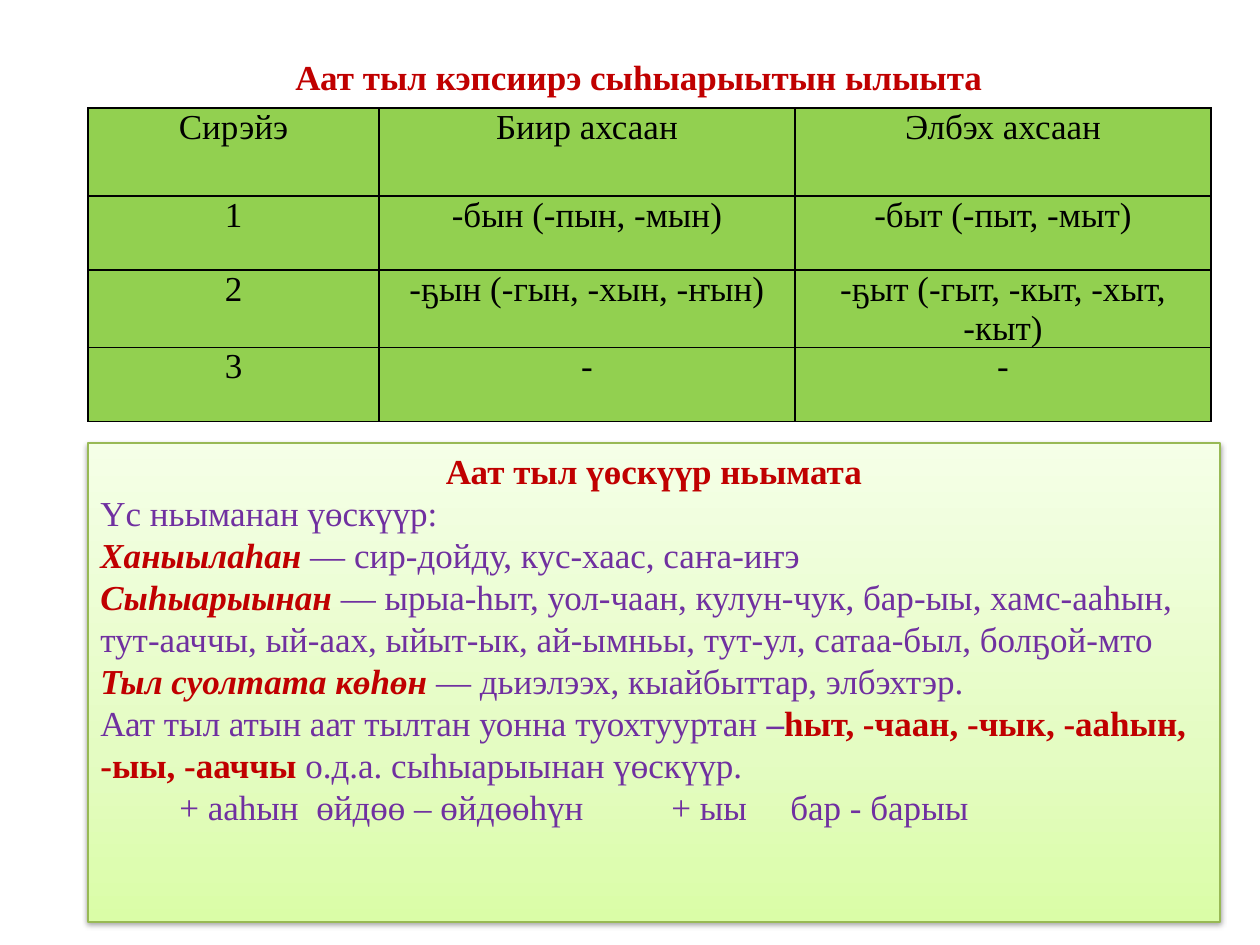
from lxml.etree import SubElement
from copy import deepcopy
from pptx import Presentation
from pptx.dml.color import RGBColor
from pptx.enum.shapes import MSO_SHAPE
from pptx.enum.text import MSO_ANCHOR, PP_ALIGN
from pptx.oxml.ns import qn
from pptx.util import Emu, Pt

COLORS = {
    "text": "000000", "heading": "C00000", "body": "7030A0",
    "cell": "92D050", "edge": "98B955",
}
PANEL_GRADIENT = [(0, "DAFDA7"), (0.35, "E4FCC2"), (1, "F5FFE7")]

HEADING = {"color": "heading", "bold": True}
TERM = {"color": "heading", "bold": True, "italic": True}
BODY = {"color": "body"}

ENDINGS = [
    ["Сирэйэ", "Биир ахсаан", "Элбэх ахсаан"],
    ["1", "-бын (-пын, -мын)", "-быт (-пыт, -мыт)"],
    ["2", "-ҕын (-гын, -хын, -ҥын)", "-ҕыт (-гыт, -кыт, -хыт, -кыт)"],
    ["3", "-", "-"],
]
FORMATION = [
    [("Үс ньыманан үөскүүр:", BODY)],
    [("Ханыылаһан ", TERM), ("— сир-дойду, кус-хаас, саҥа-иҥэ", BODY)],
    [("Сыһыарыынан ", TERM),
     ("— ырыа-һыт, уол-чаан, кулун-чук, бар-ыы, хамс-ааһын, тут-ааччы, ый-аах, "
      "ыйыт-ык, ай-ымньы, тут-ул, сатаа-был, болҕой-мто", BODY)],
    [("Тыл суолтата көһөн", TERM), (" — дьиэлээх, кыайбыттар, элбэхтэр.", BODY)],
    [("Аат тыл атын аат тылтан уонна туохтууртан ", BODY),
     ("–", {"color": "body", "bold": True}),
     ("һыт, -чаан, -чык, -ааһын, -ыы, -ааччы ", HEADING),
     ("о.д.а. сыһыарыынан үөскүүр.", BODY)],
]
EXAMPLES = [("\t+ ааһын\tөйдөө – өйдөөһүн\t+ ыы\tбар - барыы", BODY)]


def px(count):
    return Emu(round(count * 914400 / 126))


def rgb(name):
    return RGBColor.from_string(COLORS[name])


class SlideBuilder:
    font = "Times New Roman"
    size = Pt(20)

    def __init__(self, deck):
        self.page = deck.slides.add_slide(deck.slide_layouts[5])

    def add_spans(self, para, spans, align=PP_ALIGN.LEFT):
        para.alignment = align
        for text, style in spans:
            span = para.add_run()
            span.text = text
            span.font.name = self.font
            span.font.size = self.size
            span.font.bold = style.get("bold", False)
            span.font.italic = style.get("italic", False)
            span.font.color.rgb = rgb(style["color"])

    def title(self, text, left, top, width, height):
        box = self.page.shapes.title
        box.left, box.top, box.width, box.height = map(px, (left, top, width, height))
        self.add_spans(box.text_frame.paragraphs[0], [(text, HEADING)], PP_ALIGN.CENTER)

    def table(self, rows, left, top, widths, heights):
        grid = self.page.shapes.add_table(
            len(rows), len(widths), px(left), px(top),
            px(sum(widths)), px(sum(heights))).table
        for column, width in zip(grid.columns, widths):
            column.width = px(width)
        for row, height, texts in zip(grid.rows, heights, rows):
            row.height = px(height)
            for cell, text in zip(row.cells, texts):
                cell.margin_left = cell.margin_right = px(10)
                cell.margin_top = cell.margin_bottom = 0
                self.add_spans(cell.text_frame.paragraphs[0],
                               [(text, {"color": "text"})], PP_ALIGN.CENTER)
                self.border(cell)
                cell.fill.solid()
                cell.fill.fore_color.rgb = rgb("cell")

    def border(self, cell):
        properties = cell._tc.get_or_add_tcPr()
        for side in ("a:lnL", "a:lnR", "a:lnT", "a:lnB"):
            line = SubElement(properties, qn(side), w=str(Pt(1)))
            fill = SubElement(line, qn("a:solidFill"))
            SubElement(fill, qn("a:srgbClr"), val=COLORS["text"])

    def panel(self, left, top, width, height):
        """Add a gradient rectangle with a soft shadow and return its text frame."""
        box = self.page.shapes.add_shape(
            MSO_SHAPE.RECTANGLE, *map(px, (left, top, width, height)))
        box.line.color.rgb = rgb("edge")
        box.line.width = Pt(0.75)
        box.fill.gradient()
        box.fill.gradient_angle = 90
        stop_list = box._element.spPr.find(qn("a:gradFill")).find(qn("a:gsLst"))
        stop_list.append(deepcopy(stop_list[0]))
        for stop, (position, color) in zip(box.fill.gradient_stops, PANEL_GRADIENT):
            stop.position = position
            stop.color.rgb = RGBColor.from_string(color)
        box.shadow.inherit = False
        effects = box._element.spPr.find(qn("a:effectLst"))
        shadow = SubElement(effects, qn("a:outerShdw"), blurRad="40000",
                            dist="20000", dir="5400000", rotWithShape="0")
        tint = SubElement(shadow, qn("a:srgbClr"), val=COLORS["text"])
        SubElement(tint, qn("a:alpha"), val="38000")
        frame = box.text_frame
        frame.word_wrap = True
        frame.vertical_anchor = MSO_ANCHOR.TOP
        return frame

    def tab_stops(self, para, positions):
        tabs = SubElement(para._p.get_or_add_pPr(), qn("a:tabLst"))
        for position in positions:
            SubElement(tabs, qn("a:tab"), pos=str(px(position)), algn="l")


def main():
    deck = Presentation()
    deck.slide_width, deck.slide_height = px(1260), px(945)
    builder = SlideBuilder(deck)
    builder.table(ENDINGS, 88, 108, [291, 416, 416], [88, 74, 74, 74])
    builder.title("Аат тыл кэпсиирэ сыһыарыытын ылыыта", 98, 49, 1082, 55)
    frame = builder.panel(88, 443, 1132, 479)
    builder.add_spans(frame.paragraphs[0], [("Аат тыл үөскүүр ньымата", HEADING)],
                      PP_ALIGN.CENTER)
    for spans in FORMATION:
        builder.add_spans(frame.add_paragraph(), spans)
    examples = frame.add_paragraph()
    builder.add_spans(examples, EXAMPLES)
    builder.tab_stops(examples, [79, 216, 571, 690])
    deck.save("out.pptx")


if __name__ == "__main__":
    main()
